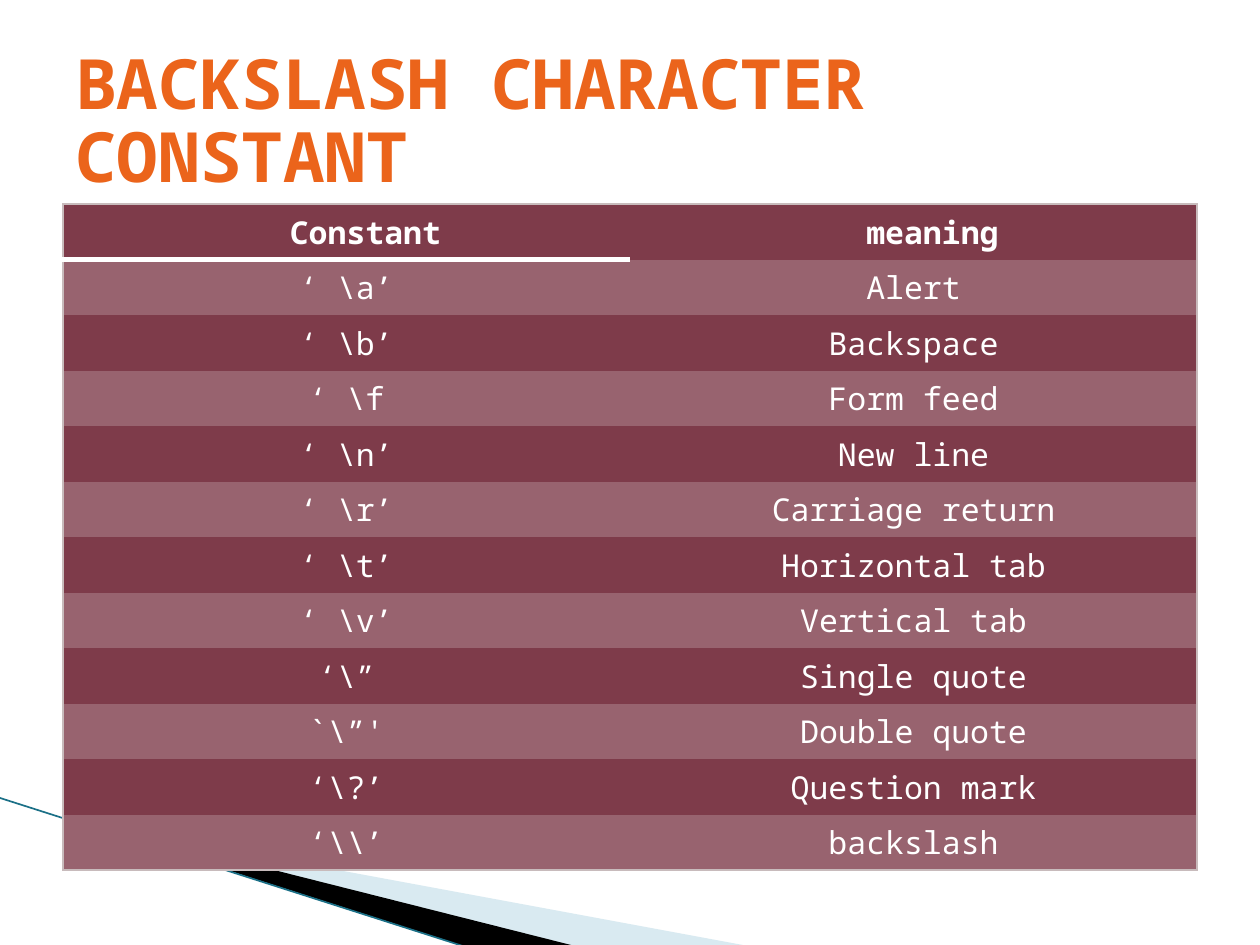
from dataclasses import dataclass

from lxml import etree
from pptx import Presentation
from pptx.dml.color import RGBColor
from pptx.enum.shapes import MSO_CONNECTOR
from pptx.enum.text import MSO_ANCHOR, PP_ALIGN
from pptx.oxml.ns import qn
from pptx.util import Inches, Pt

LEFT, CENTER = PP_ALIGN.LEFT, PP_ALIGN.CENTER
MIDDLE = MSO_ANCHOR.MIDDLE
STRAIGHT = MSO_CONNECTOR.STRAIGHT
NO_TABLE_STYLE = "{2D5ABB26-0587-4C30-8999-92F81FD0307C}"


@dataclass(frozen=True)
class Theme:
    font: str = "Noto Sans Mono"
    title_size: float = 39.6
    cell_size: float = 18
    title: str = "EB641B"
    cell_text: str = "FFFFFF"
    dark_row: str = "7E3B4A"
    light_row: str = "98636F"
    outline: str = "C8BBBC"
    header_rule: str = "FFFFFF"
    pale_wedge: str = "A0CBDC"
    dark_wedge: str = "000000"
    edge: str = "1B7087"


def write_text(frame, text, *, font, size, color, bold=False, align=LEFT,
               indent=0, spacing=None):
    paragraph = frame.paragraphs[0]
    paragraph.alignment = align
    if spacing:
        paragraph.line_spacing = spacing
    if indent:
        paragraph._p.get_or_add_pPr().set("marL", str(Inches(indent)))
    run = paragraph.add_run()
    run.text = text
    run.font.name = font
    run.font.size = Pt(size)
    run.font.bold = bold
    run.font.color.rgb = RGBColor.from_string(color)


def add_border(cell, side, color, width):
    line = etree.SubElement(cell._tc.get_or_add_tcPr(), qn(f"a:ln{side}"),
                            w=str(Pt(width)))
    fill = etree.SubElement(line, qn("a:solidFill"))
    etree.SubElement(fill, qn("a:srgbClr"), val=color)


class SlideBuilder:
    def __init__(self, slide, theme):
        self.slide = slide
        self.theme = theme

    def wedge(self, points, color, opacity=100):
        start, *others = [(Inches(x), Inches(y)) for x, y in points]
        outline = self.slide.shapes.build_freeform(*start)
        outline.add_line_segments(others, close=True)
        shape = outline.convert_to_shape()
        shape.shadow.inherit = False
        shape.line.fill.background()
        shape.fill.solid()
        shape.fill.fore_color.rgb = RGBColor.from_string(color)
        if opacity < 100:
            rgb = shape._element.spPr.find(".//" + qn("a:srgbClr"))
            etree.SubElement(rgb, qn("a:alpha"), val=str(opacity * 1000))

    def line(self, start, end, color, width):
        ends = [Inches(value) for value in (*start, *end)]
        connector = self.slide.shapes.add_connector(STRAIGHT, *ends)
        connector.line.color.rgb = RGBColor.from_string(color)
        connector.line.width = Pt(width)
        etree.SubElement(connector._element.spPr, qn("a:effectLst"))

    def title(self, text, left, top, width, height):
        box = self.slide.shapes.add_textbox(
            Inches(left), Inches(top), Inches(width), Inches(height))
        frame = box.text_frame
        frame.word_wrap = True
        frame.vertical_anchor = MIDDLE
        write_text(frame, text, font=self.theme.font, bold=True, spacing=0.88,
                   size=self.theme.title_size, color=self.theme.title)

    def table(self, rows, left, top, width, row_height):
        theme = self.theme
        last_row, last_column = len(rows) - 1, len(rows[0]) - 1
        table = self.slide.shapes.add_table(
            len(rows), len(rows[0]), Inches(left), Inches(top),
            Inches(width), Inches(row_height * len(rows))).table
        table.horz_banding = False
        table._tbl.tblPr.find(qn("a:tableStyleId")).text = NO_TABLE_STYLE

        for r, values in enumerate(rows):
            header = r == 0
            for c, value in enumerate(values):
                cell = table.cell(r, c)
                # Outer frame, and the rule under the first heading
                if c == 0:
                    add_border(cell, "L", theme.outline, 1)
                if c == last_column:
                    add_border(cell, "R", theme.outline, 1)
                if header:
                    add_border(cell, "T", theme.outline, 1)
                if header and c == 0:
                    add_border(cell, "B", theme.header_rule, 3)
                if r == last_row:
                    add_border(cell, "B", theme.outline, 1)
                # Alternating row colours
                cell.fill.solid()
                cell.fill.fore_color.rgb = RGBColor.from_string(
                    theme.light_row if r % 2 else theme.dark_row)
                write_text(cell.text_frame, value, font=theme.font,
                           size=theme.cell_size, color=theme.cell_text,
                           bold=header, align=CENTER,
                           indent=0.3 if header else 0)


CONSTANTS = [
    ("Constant", "meaning"),
    ("‘ \\a’", "Alert"),
    ("‘ \\b’", "Backspace"),
    ("‘ \\f", "Form feed"),
    ("‘ \\n’", "New line"),
    ("‘ \\r’", "Carriage return"),
    ("‘ \\t’", "Horizontal tab"),
    ("‘ \\v’", "Vertical tab"),
    ("‘\\”", "Single quote"),
    ("`\\”'", "Double quote"),
    ("‘\\?’", "Question mark"),
    ("‘\\\\’", "backslash"),
]


def main():
    deck = Presentation()
    deck.slide_width, deck.slide_height = Inches(10), Inches(7.5)
    theme = Theme()
    builder = SlideBuilder(deck.slides.add_slide(deck.slide_layouts[6]), theme)

    # Corner decoration
    builder.wedge([(0.55, 6.51), (5.95, 7.51), (4.56, 7.51), (0.55, 6.5)],
                  theme.pale_wedge, opacity=40)
    builder.wedge([(0.53, 6.49), (4.57, 7.51), (3.72, 7.52), (0.54, 6.5)],
                  theme.dark_wedge)
    builder.line((-0.01, 6.33), (3.71, 7.52), theme.edge, 0.95)

    # Table of escape sequences
    builder.table(CONSTANTS, left=0.5, top=1.62, width=9, row_height=0.44)

    # Heading
    builder.title("BACKSLASH CHARACTER CONSTANT", 0.5, 0.36, 9, 1.25)

    deck.save("out.pptx")


if __name__ == "__main__":
    main()
